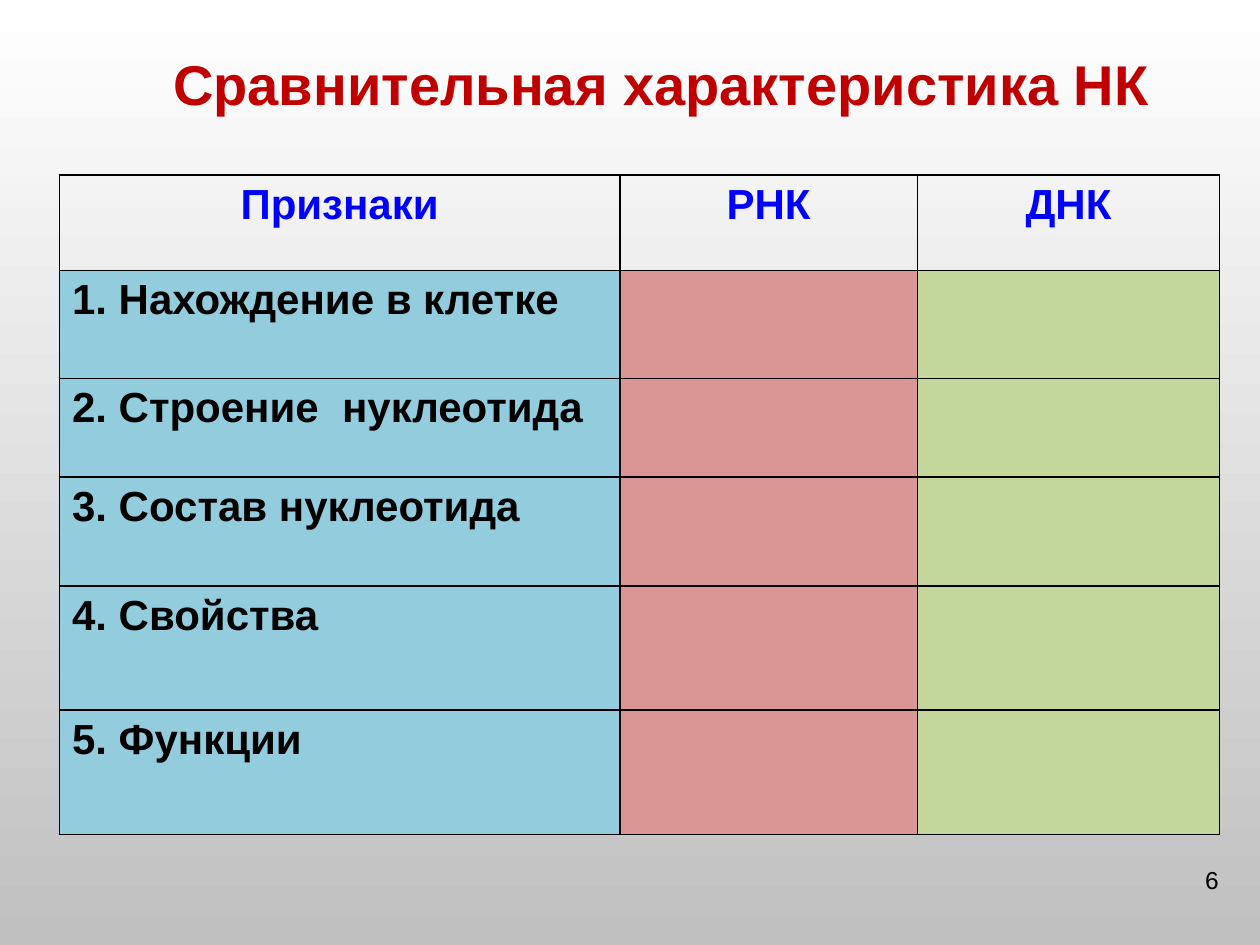
"""Build a slide with a comparison table of the nucleic acids."""
import lxml.etree
import pptx
import pptx.dml.color
import pptx.enum.text
import pptx.oxml.ns
import pptx.util

Pt = pptx.util.Pt
RGBColor = pptx.dml.color.RGBColor
ALIGN = pptx.enum.text.PP_ALIGN
ANCHOR = pptx.enum.text.MSO_ANCHOR

WHITE = RGBColor(0xFF, 0xFF, 0xFF)
SILVER = RGBColor(0xC0, 0xC0, 0xC0)
BLACK = RGBColor(0, 0, 0)
RED = RGBColor(0xC0, 0, 0)
BLUE = RGBColor(0, 0, 0xFF)
AQUA = RGBColor(0x93, 0xCD, 0xDD)
ROSE = RGBColor(0xD9, 0x96, 0x94)
OLIVE = RGBColor(0xC3, 0xD6, 0x9B)

HEADINGS = ["Признаки", "РНК", "ДНК"]
FEATURES = [
    "1. Нахождение в клетке",
    "2. Строение  нуклеотида",
    "3. Состав нуклеотида",
    "4. Свойства",
    "5. Функции",
]
COLUMN_WIDTHS = [320.2, 170, 172.8]
ROW_HEIGHTS = [54.5, 61.8, 56.2, 62.4, 71, 71]


class SlideBuilder:
    font_name = "Arial"

    def __init__(self, slide):
        self.slide = slide

    def background(self, top, bottom):
        fill = self.slide.background.fill
        fill.gradient()
        fill.gradient_angle = 270
        for stop, position, color in zip(fill.gradient_stops, (0, 1), (top, bottom)):
            stop.position = position
            stop.color.rgb = color

    def set_text(self, frame, text, size, color, align, bold):
        paragraph = frame.paragraphs[0]
        paragraph.text = text
        paragraph.alignment = align
        font = paragraph.font
        font.name = self.font_name
        font.size = Pt(size)
        font.bold = bold
        font.color.rgb = color

    def text(self, box, text, size, color, align, bold=False, anchor=ANCHOR.TOP):
        frame = self.slide.shapes.add_textbox(*map(Pt, box)).text_frame
        frame.word_wrap = True
        frame.vertical_anchor = anchor
        self.set_text(frame, text, size, color, align, bold)

    def borders(self, cell, color, width):
        properties = cell._tc.get_or_add_tcPr()
        qn = pptx.oxml.ns.qn
        for side in ("a:lnL", "a:lnR", "a:lnT", "a:lnB"):
            line = lxml.etree.SubElement(properties, qn(side), w=str(Pt(width)))
            solid = lxml.etree.SubElement(line, qn("a:solidFill"))
            lxml.etree.SubElement(solid, qn("a:srgbClr"), val=str(color))

    def table(self, left, top, headings, features, widths, heights, fills):
        rows = [headings] + [[feature, "", ""] for feature in features]
        table = self.slide.shapes.add_table(
            len(rows), len(widths), Pt(left), Pt(top), Pt(sum(widths)), Pt(sum(heights))
        ).table
        table.first_row = table.horz_banding = False
        for column, width in zip(table.columns, widths):
            column.width = Pt(width)
        for index, (row, height, texts) in enumerate(zip(table.rows, heights, rows)):
            row.height = Pt(height)
            for cell, text, fill in zip(row.cells, texts, fills):
                self.borders(cell, BLACK, 1)
                if index == 0:
                    cell.fill.background()
                    self.set_text(cell.text_frame, text, 24, BLUE, ALIGN.CENTER, True)
                    continue
                cell.fill.solid()
                cell.fill.fore_color.rgb = fill
                if text:
                    self.set_text(cell.text_frame, text, 24, BLACK, ALIGN.LEFT, True)


def main():
    deck = pptx.Presentation()
    deck.slide_width, deck.slide_height = Pt(720), Pt(540)
    builder = SlideBuilder(deck.slides.add_slide(deck.slide_layouts[6]))
    builder.background(WHITE, SILVER)
    builder.text((535.7, 491, 167.8, 37.4), "6", 14, BLACK, ALIGN.RIGHT)
    builder.text((72, 20.2, 612, 54.7), "Сравнительная характеристика НК", 32, RED,
                 ALIGN.CENTER, bold=True, anchor=ANCHOR.MIDDLE)
    builder.table(34, 100, HEADINGS, FEATURES, COLUMN_WIDTHS, ROW_HEIGHTS,
                  (AQUA, ROSE, OLIVE))
    deck.save("out.pptx")


if __name__ == "__main__":
    main()
